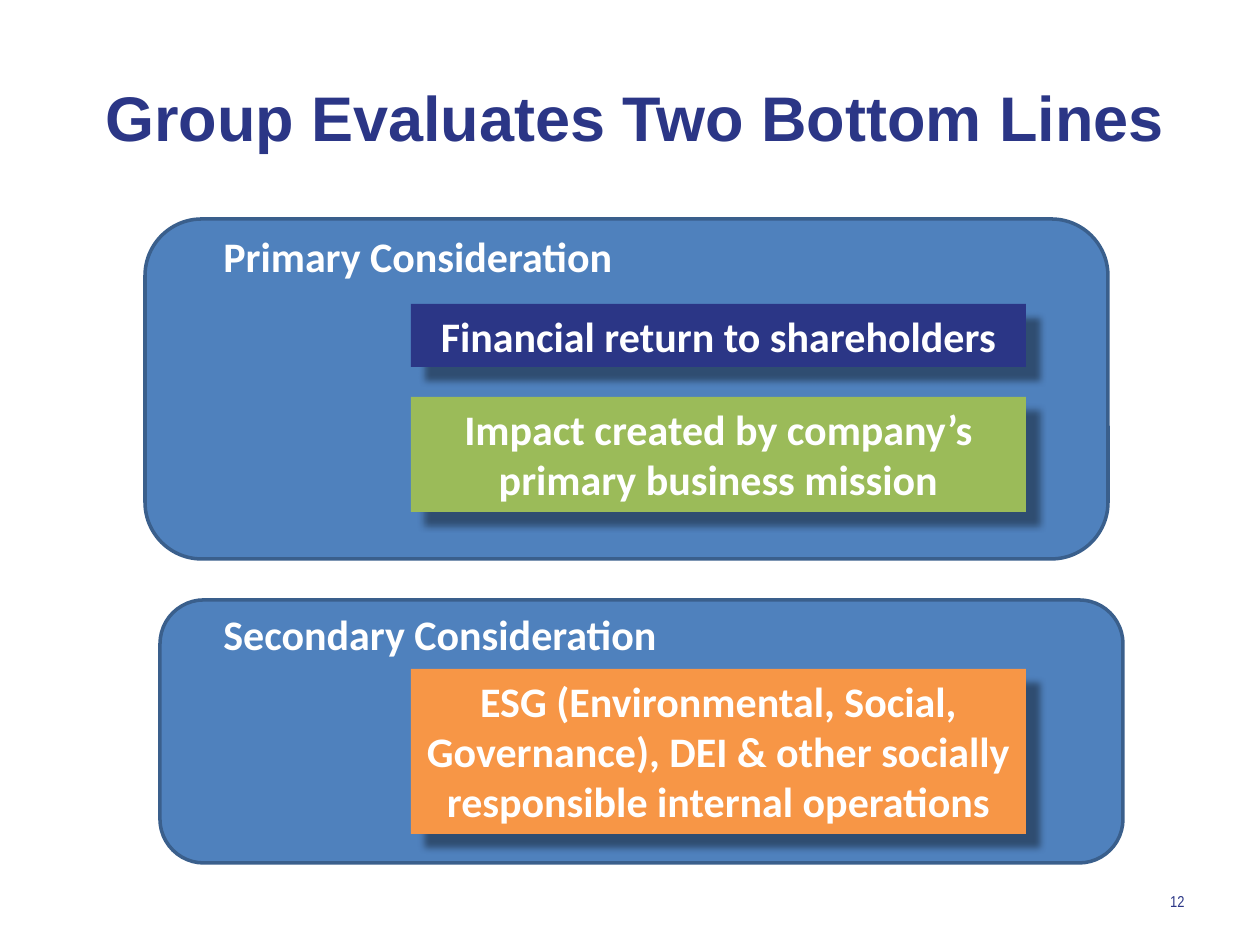
"""Builds the slide on the two bottom lines that an investor network evaluates."""
from lxml import etree
from pptx import Presentation
from pptx.dml.color import RGBColor
from pptx.enum.shapes import MSO_SHAPE
from pptx.enum.text import MSO_ANCHOR, PP_ALIGN
from pptx.oxml.ns import qn
from pptx.util import Emu, Pt

SCALE = 914400 / 126
COLORS = {
    "navy": "2B3686",
    "blue": "4F81BD",
    "edge": "3A5F8C",
    "green": "9BBB59",
    "orange": "F79646",
    "white": "FFFFFF",
    "black": "000000",
}
TITLE = {"name": "Arial", "size": Pt(36), "bold": True}
BODY = {"name": "Calibri", "size": Pt(24), "bold": True}
NUMBER = {"name": "Arial Narrow", "size": Pt(9), "bold": False}


def px(*lengths):
    return [Emu(round(length * SCALE)) for length in lengths]


def write(shape, text, style, color, align, anchor=MSO_ANCHOR.TOP, wrap=True):
    frame = shape.text_frame
    frame.word_wrap = wrap
    frame.vertical_anchor = anchor
    paragraph = frame.paragraphs[0]
    paragraph.alignment = align
    run = paragraph.add_run()
    run.text = text
    for attribute, value in style.items():
        setattr(run.font, attribute, value)
    run.font.color.rgb = RGBColor.from_string(COLORS[color])


prs = Presentation()
prs.slide_width, prs.slide_height = px(1260, 945)
slide = prs.slides.add_slide(prs.slide_layouts[5])
shapes = slide.shapes

title = shapes.title
title.left, title.top, title.width, title.height = px(73, 38, 1124, 157)
write(title, "Group Evaluates Two Bottom Lines", TITLE, "navy", PP_ALIGN.CENTER, MSO_ANCHOR.MIDDLE)

page_number = shapes.add_textbox(*px(1124, 876, 73, 50))
write(page_number, "12", NUMBER, "navy", PP_ALIGN.RIGHT, MSO_ANCHOR.MIDDLE)

for left, top, height in [(145, 219, 340), (160, 600, 263)]:
    panel = shapes.add_shape(MSO_SHAPE.ROUNDED_RECTANGLE, *px(left, top, 963, height))
    panel.shadow.inherit = False
    panel.fill.solid()
    panel.fill.fore_color.rgb = RGBColor.from_string(COLORS["blue"])
    panel.line.color.rgb = RGBColor.from_string(COLORS["edge"])
    panel.line.width = Pt(2)

criteria = [
    (304, 63, "navy", "Financial return to shareholders"),
    (397, 115, "green", "Impact created by company’s primary business mission"),
    (669, 165, "orange",
     "ESG (Environmental, Social, Governance), DEI & other socially responsible internal operations"),
]
for top, height, color, text in criteria:
    criterion = shapes.add_shape(MSO_SHAPE.RECTANGLE, *px(411, top, 615, height))
    criterion.fill.solid()
    criterion.fill.fore_color.rgb = RGBColor.from_string(COLORS[color])
    criterion.line.fill.background()
    criterion.shadow.inherit = False
    effects = criterion.element.spPr.find(qn("a:effectLst"))
    shadow = etree.SubElement(effects, qn("a:outerShdw"), blurRad=str(Pt(4)), dist=str(Pt(11)),
                              dir="2700000", algn="tl", rotWithShape="0")
    shade = etree.SubElement(shadow, qn("a:srgbClr"), val=COLORS["black"])
    etree.SubElement(shade, qn("a:alpha"), val="40000")
    write(criterion, text, BODY, "white", PP_ALIGN.CENTER)

for top, width, text in [(224, 418, "Primary Consideration"), (602, 464, "Secondary Consideration")]:
    heading = shapes.add_textbox(*px(211, top, width, 63))
    write(heading, text, BODY, "white", PP_ALIGN.LEFT, wrap=False)

prs.save("out.pptx")
